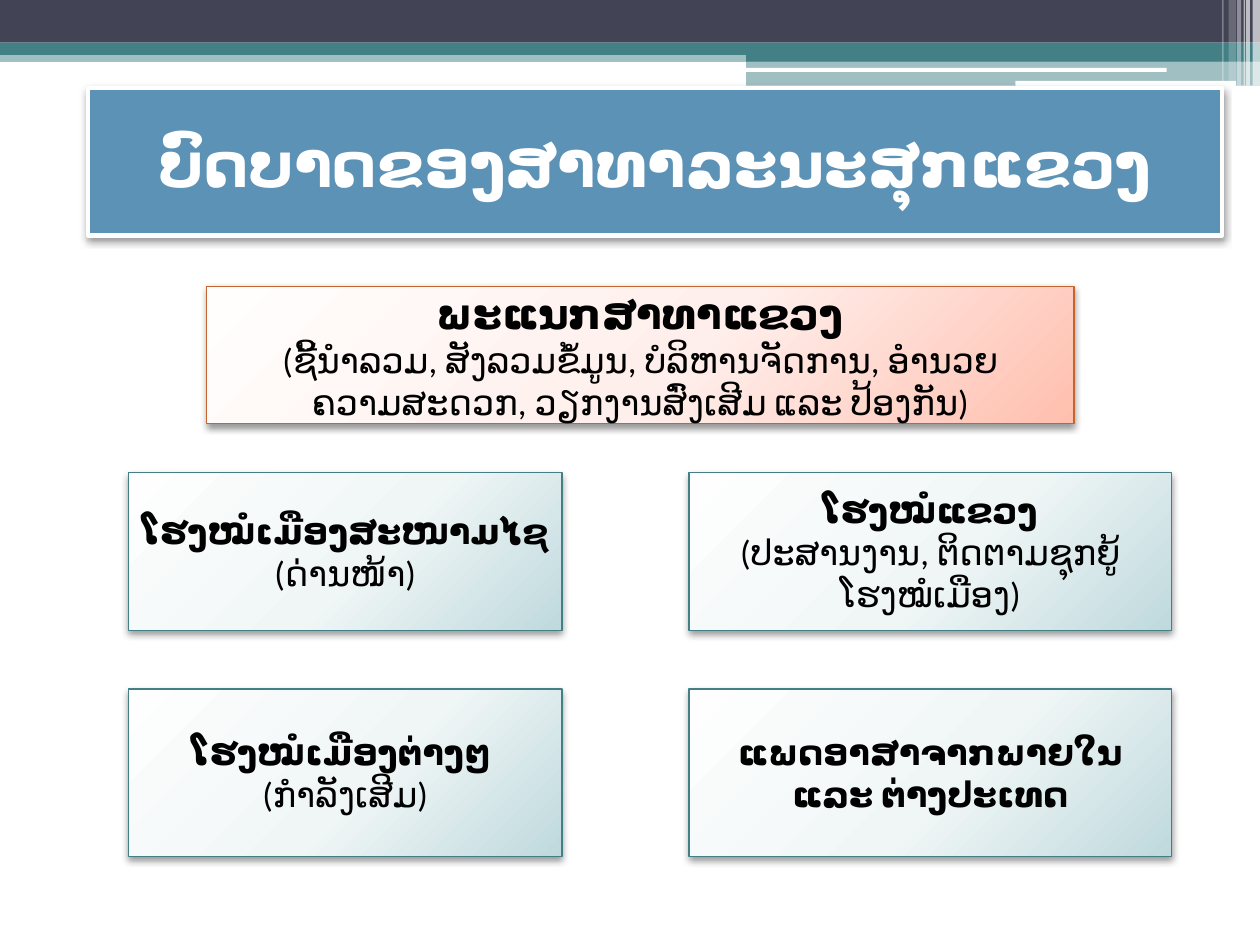
from pptx import Presentation
from pptx.dml.color import RGBColor
from pptx.enum.shapes import MSO_SHAPE
from pptx.enum.text import MSO_ANCHOR, PP_ALIGN
from pptx.oxml import parse_xml
from pptx.oxml.ns import nsdecls
from pptx.util import Cm, Pt

RECT, ROUND = MSO_SHAPE.RECTANGLE, MSO_SHAPE.ROUNDED_RECTANGLE
MIDDLE, CENTER = MSO_ANCHOR.MIDDLE, PP_ALIGN.CENTER


class Theme:
    font = "Calibri"
    title, head, body = 36, 24, 20
    white, black = "FFFFFF", "000000"
    navy, teal, blue, orange = "424456", "438086", "5C92B5", "C4652D"
    warm = ("FFFEFD", "FFEFEC", "FFBFAE")
    cool = ("FEFEFE", "F0F6F6", "BFD9DD")


deck = Presentation()
deck.slide_width, deck.slide_height = Cm(25.4), Cm(19.05)
slide = deck.slides.add_slide(deck.slide_layouts[6])


def add_bar(kind, place, color, alpha=100):
    """Add a plain shape without outline; alpha is its opacity in percent."""
    bar = slide.shapes.add_shape(kind, *[Cm(n) for n in place])
    bar.shadow.inherit = False
    bar.line.fill.background()
    bar.fill.solid()
    bar.fill.fore_color.rgb = RGBColor.from_string(color)
    if alpha < 100:
        tint = bar.fill._xPr.solidFill[0]
        tint.append(parse_xml(f'<a:alpha {nsdecls("a")} val="{alpha * 1000}"/>'))
    return bar


def add_card(place, fill, edge, width, ink, paras):
    """Add a shadowed text card; fill is one colour or three gradient stops."""
    card = add_bar(RECT, place, fill if isinstance(fill, str) else fill[0])
    card.line.color.rgb = RGBColor.from_string(edge)
    card.line.width = Pt(width)
    props = card.fill._xPr
    if not isinstance(fill, str):
        stops = "".join(f'<a:gs pos="{pos}"><a:srgbClr val="{c}"/></a:gs>'
                        for pos, c in zip((0, 55000, 100000), fill))
        props.replace(props.solidFill, parse_xml(
            f'<a:gradFill {nsdecls("a")} rotWithShape="1"><a:gsLst>{stops}</a:gsLst>'
            '<a:path path="circle"><a:fillToRect l="-40000" t="-90000" '
            'r="140000" b="190000"/></a:path></a:gradFill>'))
    props.effectLst.append(parse_xml(
        f'<a:outerShdw {nsdecls("a")} blurRad="{Pt(4.1)}" dist="{Pt(2)}" '
        'dir="5400000" rotWithShape="0"><a:srgbClr val="000000">'
        '<a:alpha val="40000"/></a:srgbClr></a:outerShdw>'))
    frame = card.text_frame
    frame.word_wrap = True
    frame.vertical_anchor = MIDDLE
    for i, (text, size, bold) in enumerate(paras):
        para = frame.add_paragraph() if i else frame.paragraphs[0]
        para.alignment = CENTER
        run = para.add_run()
        run.text = text
        font = run.font
        font.name, font.size, font.bold = Theme.font, Pt(size), bold
        font.color.rgb = RGBColor.from_string(ink)
        # Lao takes its typeface from the complex-script slot
        font._element.append(parse_xml(
            f'<a:cs {nsdecls("a")} typeface="{Theme.font}"/>'))


# Header bands
add_bar(RECT, (0, 1.02, 25.4, 0.23), Theme.teal, 50)
add_bar(RECT, (0, 0, 25.4, 0.86), Theme.navy)
add_bar(RECT, (0, 0.86, 25.4, 0.25), Theme.teal)
add_bar(RECT, (15.04, 0.99, 10.36, 0.25), Theme.teal)
add_bar(RECT, (15.04, 1.23, 10.36, 0.5), Theme.teal, 50)
add_bar(ROUND, (15.01, 1.37, 8.51, 0.08), Theme.white)
add_bar(ROUND, (20.47, 1.63, 4.45, 0.1), Theme.white)

# Upright stripes at the right end: left, width, height, opacity
for left, wide, high, alpha in (
        (25.25, 0.15, 1.73, 65), (25.12, 0.08, 1.73, 65),
        (25.07, 0.03, 1.73, 60), (24.94, 0.08, 1.73, 40),
        (24.77, 0.15, 1.63, 20), (24.64, 0.03, 1.63, 30)):
    add_bar(RECT, (left, 0, wide, high), Theme.white, alpha)

# Title
add_card((1.78, 1.78, 22.86, 2.97), Theme.blue, Theme.white, 2.5, Theme.white,
         [("ບົດບາດຂອງສາທາລະນະສຸກແຂວງ", Theme.title, True)])

# Province health department
add_card((4.17, 5.77, 17.48, 2.77), Theme.warm, Theme.orange, 0.75, Theme.black, [
    ("ພະແນກສາທາແຂວງ", Theme.head, True),
    ("(ຊີ້ນຳລວມ, ສັງລວມຂໍ້ມູນ, ບໍລິຫານຈັດການ, ອຳນວຍຄວາມສະດວກ, "
     "ວຽກງານສົ່ງເສີມ ແລະ ປ້ອງກັນ)", Theme.body, False)])

# Two by two grid of units: bold name, then role
cols = ((2.59, 8.74), (13.89, 9.73))
rows = ((9.53, 3.18), (13.89, 3.38))
units = (
    (("ໂຮງໝໍເມືອງສະໜາມໄຊ ", "(ດ່ານໜ້າ)"),
     ("ໂຮງໝໍແຂວງ", "(ປະສານງານ, ຕິດຕາມຊຸກຍູ້ໂຮງໝໍເມືອງ)")),
    (("ໂຮງໝໍເມືອງຕ່າງໆ ", "(ກຳລັງເສີມ)"),
     ("ແພດອາສາຈາກພາຍໃນ ແລະ ຕ່າງປະເທດ",)))
for (top, high), line in zip(rows, units):
    for (left, wide), texts in zip(cols, line):
        paras = [(text, Theme.body, i == 0) for i, text in enumerate(texts)]
        add_card((left, top, wide, high), Theme.cool, Theme.teal, 0.75,
                 Theme.black, paras)

deck.save("out.pptx")
